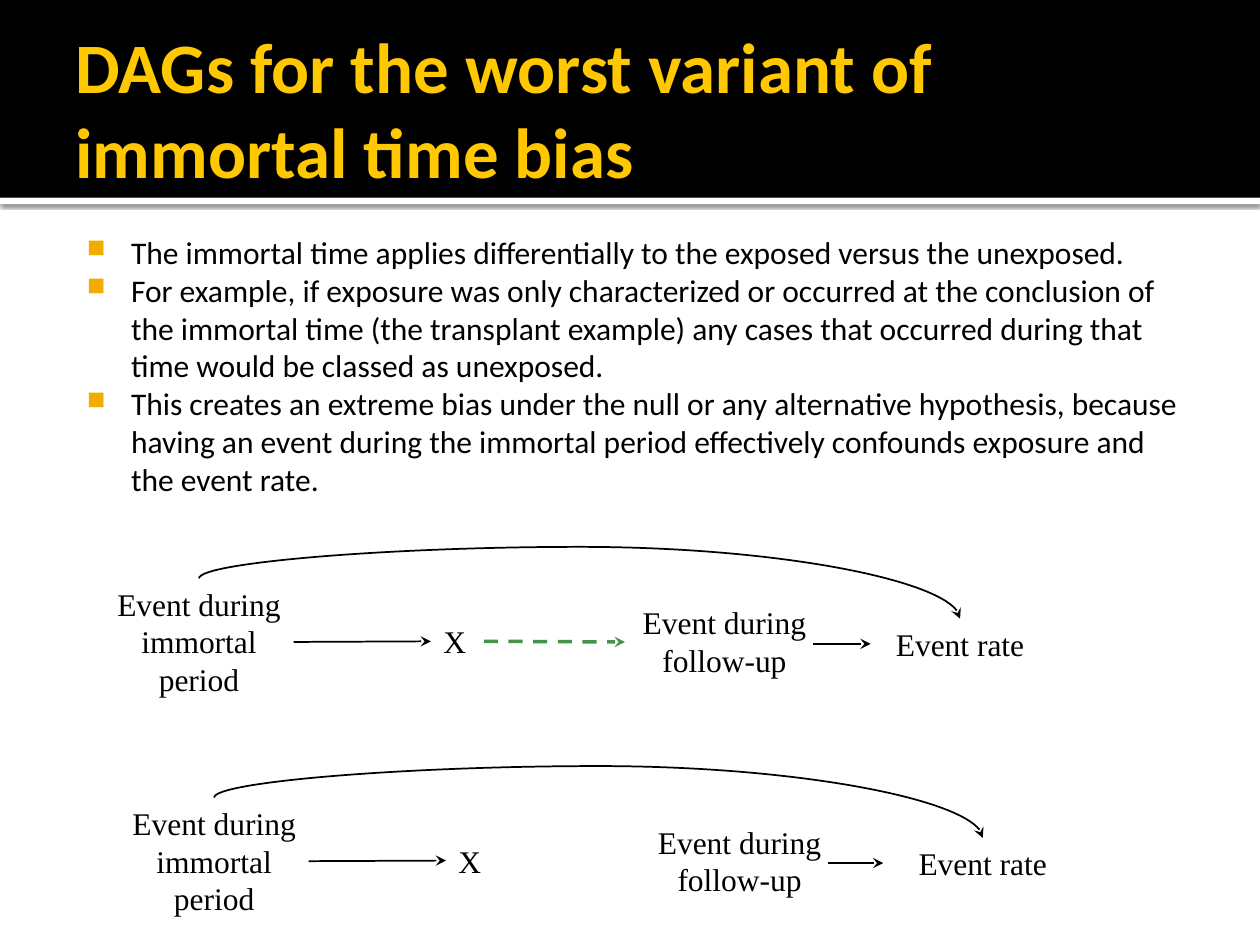
"""Build a slide with two causal diagrams of immortal time bias."""
from lxml import etree
from pptx import Presentation
from pptx import util as u
from pptx.dml.color import RGBColor
from pptx.enum import dml, shapes, text
from pptx.oxml import parse_xml
from pptx.oxml.ns import nsdecls, qn

BLACK = RGBColor(0x00, 0x00, 0x00)
WHITE = RGBColor(0xFF, 0xFF, 0xFF)
YELLOW = RGBColor(0xFF, 0xC8, 0x00)
GREEN = RGBColor(0x47, 0x92, 0x49)
BULLET_COLOR = RGBColor(0xF0, 0xAD, 0x00)

TITLE = "DAGs for the worst variant of immortal time bias"
POINTS = [
    "The immortal time applies differentially to the exposed versus the unexposed.",
    "For example, if exposure was only characterized or occurred at the conclusion of "
    "the immortal time (the transplant example) any cases that occurred during that "
    "time would be classed as unexposed.",
    "This creates an extreme bias under the null or any alternative hypothesis, because "
    "having an event during the immortal period effectively confounds exposure and "
    "the event rate.",
]
NODES = {
    "exposure": ("X", 3.42, 4.89, 0.42, 0.40),
    "immortal": ("Event during immortal period", 0.83, 4.59, 1.50, 1.01),
    "follow_up": ("Event during follow-up", 4.96, 4.74, 1.58, 0.71),
}
RATE_TEXT, RATE_TOP, RATE_HEIGHT = "Event rate", 4.91, 0.40
FOLLOW_UP_ARROW_X = 6.45
CURVE_ADJUSTMENT = -78200
DIAGRAMS = [
    {"dx": 0, "dy": 0, "rate_left": 6.91, "rate_width": 1.42, "exposure_effect": True},
    {"dx": 0.12, "dy": 1.74, "rate_left": 7.01, "rate_width": 1.58, "exposure_effect": False},
]


def format_runs(paragraph, font_name, size, color, bold=False):
    for run in paragraph.runs:
        run.font.name = font_name
        run.font.size = u.Pt(size)
        run.font.bold = bold
        run.font.color.rgb = color


def set_insets(frame, left, top, right, bottom):
    frame.margin_left, frame.margin_top = u.Inches(left), u.Inches(top)
    frame.margin_right, frame.margin_bottom = u.Inches(right), u.Inches(bottom)


def add_band(slide, top, height, color):
    band = slide.shapes.add_shape(
        shapes.MSO_SHAPE.RECTANGLE, 0, u.Inches(top), u.Inches(10), u.Inches(height))
    band.shadow.inherit = False
    band.fill.solid()
    band.fill.fore_color.rgb = color
    band.line.fill.background()
    return band


def add_header(slide):
    rule = add_band(slide, 1.57, 0.05, WHITE)
    rule._element.spPr.find(qn("a:effectLst")).append(parse_xml(
        f'<a:outerShdw {nsdecls("a")} blurRad="31750" dist="10160" dir="5400000">'
        '<a:srgbClr val="000000"><a:alpha val="60000"/></a:srgbClr></a:outerShdw>'))
    add_band(slide, 0, 1.57, BLACK)
    title = slide.shapes.title
    slide.shapes._spTree.append(title._element)
    title.left, title.top = u.Inches(0.5), u.Inches(0.17)
    title.width, title.height = u.Inches(9), u.Inches(1.37)
    frame = title.text_frame
    frame.text = TITLE
    frame.word_wrap = True
    frame.auto_size = text.MSO_AUTO_SIZE.NONE
    frame.vertical_anchor = text.MSO_ANCHOR.MIDDLE
    set_insets(frame, 0.1, 0.05, 0.05, 0.05)
    frame.paragraphs[0].alignment = text.PP_ALIGN.LEFT
    format_runs(frame.paragraphs[0], "Calibri", 40.5, YELLOW, bold=True)


def add_bullet(paragraph):
    properties = paragraph._p.get_or_add_pPr()
    properties.set("marL", str(u.Inches(0.48)))
    properties.set("indent", str(u.Inches(-0.35)))
    color = etree.SubElement(properties, qn("a:buClr"))
    etree.SubElement(color, qn("a:srgbClr"), val=str(BULLET_COLOR))
    etree.SubElement(properties, qn("a:buSzPct"), val="80000")
    etree.SubElement(properties, qn("a:buChar"), char="■")


def add_points(slide):
    body = slide.shapes.add_textbox(
        u.Inches(0.5), u.Inches(1.75), u.Inches(8.95), u.Inches(5.17))
    frame = body.text_frame
    frame.word_wrap = True
    set_insets(frame, 0.06, 0.1, 0.1, 0.05)
    frame.text = "\n".join(POINTS)
    for paragraph in frame.paragraphs:
        add_bullet(paragraph)
        format_runs(paragraph, "Calibri", 18, BLACK)


def add_node(slide, label, left, top, width, height):
    node = slide.shapes.add_textbox(*map(u.Inches, (left, top, width, height)))
    frame = node.text_frame
    frame.word_wrap = True
    frame.auto_size = text.MSO_AUTO_SIZE.SHAPE_TO_FIT_TEXT
    frame.text = label
    paragraph = frame.paragraphs[0]
    paragraph.alignment = text.PP_ALIGN.LEFT if label == "X" else text.PP_ALIGN.CENTER
    spacing = etree.SubElement(paragraph._p.get_or_add_pPr(), qn("a:spcBef"))
    etree.SubElement(spacing, qn("a:spcPct"), val="20000")
    format_runs(paragraph, "Times New Roman", 18, BLACK)
    return node


def style_arrow(arrow, color=BLACK, width=1):
    arrow.line.color.rgb = color
    arrow.line.width = u.Pt(width)
    if color == GREEN:
        arrow.line.dash_style = dml.MSO_LINE.DASH
    etree.SubElement(arrow.line._get_or_add_ln(), qn("a:tailEnd"), type="stealth")
    etree.SubElement(arrow._element.spPr, qn("a:effectLst"))


def add_arrow(slide, start, end, color=BLACK, width=1):
    arrow = slide.shapes.add_connector(shapes.MSO_CONNECTOR.STRAIGHT, 0, 0, 0, 0)
    arrow.begin_connect(start, 3)
    arrow.end_connect(end, 1)
    style_arrow(arrow, color, width)
    return arrow


def add_curve(slide, start, end):
    start_x, end_x = start.left + start.width // 2, end.left + end.width // 2
    middle_x, middle_y = (start_x + end_x) // 2, (start.top + end.top) // 2
    half_span, half_drop = (end_x - start_x) // 2, (end.top - start.top) // 2
    curve = slide.shapes.add_connector(
        shapes.MSO_CONNECTOR.CURVE,
        middle_x + half_drop, middle_y - half_span,
        middle_x - half_drop, middle_y + half_span)
    properties = curve._element.spPr
    properties.find(qn("a:xfrm")).set("rot", str(270 * 60000))
    adjustments = properties.find(qn("a:prstGeom")).get_or_add_avLst()
    etree.SubElement(adjustments, qn("a:gd"), name="adj1", fmla=f"val {CURVE_ADJUSTMENT}")
    style_arrow(curve)


def add_diagram(slide, dx, dy, rate_left, rate_width, exposure_effect):
    nodes = {name: add_node(slide, label, left + dx, top + dy, width, height)
             for name, (label, left, top, width, height) in NODES.items()}
    rate = add_node(slide, RATE_TEXT, rate_left, RATE_TOP + dy, rate_width, RATE_HEIGHT)
    add_arrow(slide, nodes["immortal"], nodes["exposure"])
    if exposure_effect:
        add_arrow(slide, nodes["exposure"], nodes["follow_up"], GREEN, 2)
    rate_middle = rate.top + rate.height // 2
    follow_up_arrow = slide.shapes.add_connector(
        shapes.MSO_CONNECTOR.STRAIGHT, u.Inches(FOLLOW_UP_ARROW_X + dx), rate_middle,
        rate.left, rate_middle)
    follow_up_arrow.end_connect(rate, 1)
    style_arrow(follow_up_arrow)
    add_curve(slide, nodes["immortal"], rate)


def main():
    presentation = Presentation()
    presentation.slide_width, presentation.slide_height = u.Inches(10), u.Inches(7.5)
    slide = presentation.slides.add_slide(presentation.slide_layouts[5])
    add_header(slide)
    add_points(slide)
    for diagram in DIAGRAMS:
        add_diagram(slide, **diagram)
    presentation.save("out.pptx")


if __name__ == "__main__":
    main()
